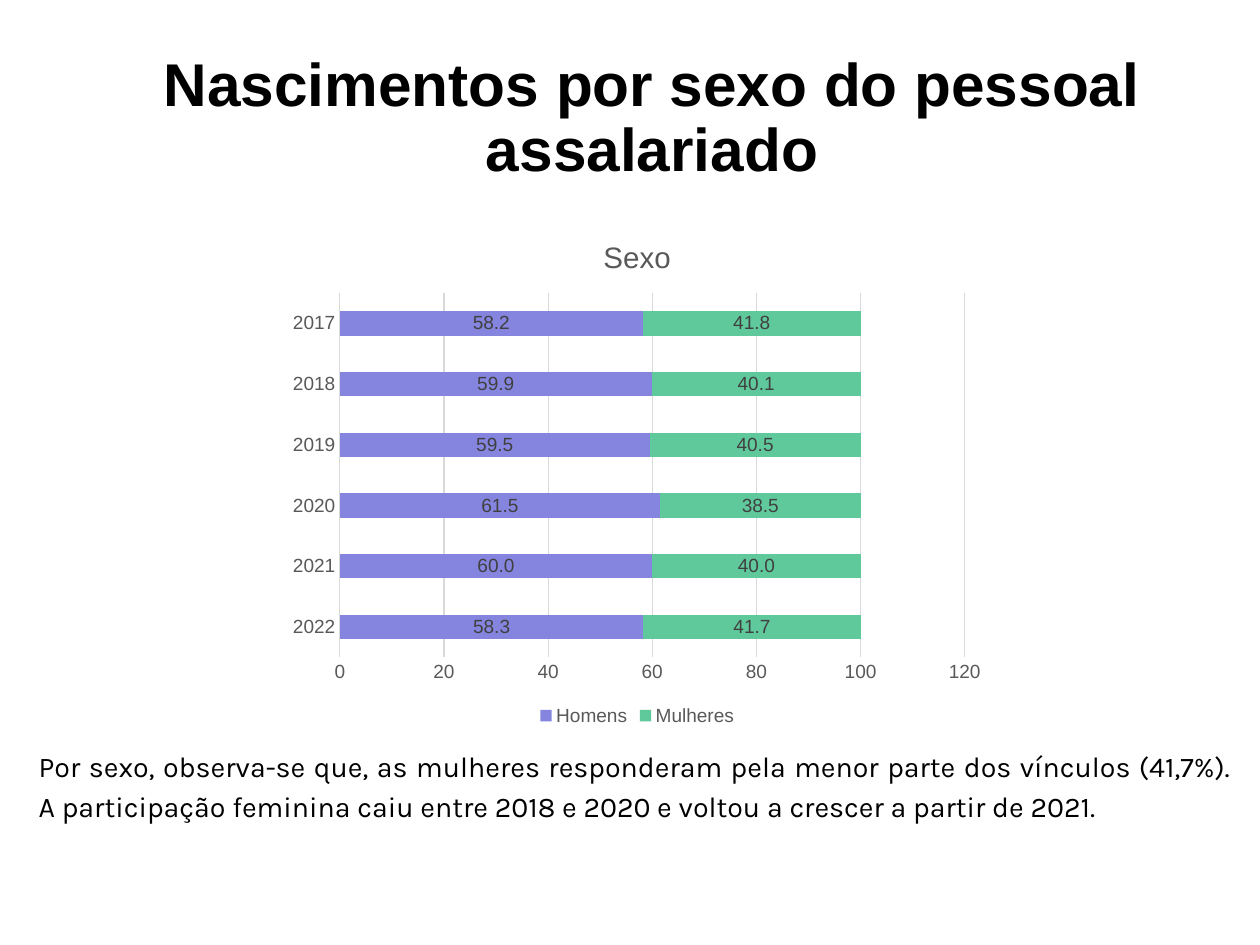
from pptx import Presentation
from pptx import util as u
from pptx.chart.data import CategoryChartData
from pptx.dml.color import RGBColor
from pptx.enum import chart as kinds, text
from pptx.oxml import parse_xml
from pptx.oxml.ns import nsdecls, qn

TITLE = "Nascimentos por sexo do pessoal assalariado"
COMMENT = (
    "Por sexo, observa-se que, as mulheres responderam pela menor parte dos "
    "vínculos (41,7%). A participação feminina caiu entre 2018 e 2020 e voltou "
    "a crescer a partir de 2021."
)
CHART_TITLE = "Sexo"
YEARS = ["2022", "2021", "2020", "2019", "2018", "2017"]
BLACK = RGBColor(0x00, 0x00, 0x00)
DARK = RGBColor(0x40, 0x40, 0x40)
GREY = RGBColor(0x59, 0x59, 0x59)
LIGHT = RGBColor(0xD9, 0xD9, 0xD9)
VIOLET = RGBColor(0x85, 0x85, 0xE0)
GREEN = RGBColor(0x60, 0xC9, 0x9C)
SHARES = [
    ("Homens", [58.3, 60, 61.5, 59.5, 59.9, 58.2], VIOLET),
    ("Mulheres", [41.7, 40, 38.5, 40.5, 40.1, 41.8], GREEN),
]
PLOT_PLACE = {"x": 0.085, "y": 0.15, "w": 0.872, "h": 0.708}


def set_font(font, size, color, name="Arial", bold=False):
    font.size, font.name, font.bold = u.Pt(size), name, bold
    font.color.rgb = color


def set_line(line, color):
    line.color.rgb = color
    line.width = u.Pt(0.75)


def add_text(page, place, words, align, spacing, anchor, **style):
    box = page.shapes.add_textbox(*map(u.Inches, place))
    frame = box.text_frame
    frame.word_wrap = True
    frame.vertical_anchor = anchor
    para = frame.paragraphs[0]
    para.text = words
    para.alignment = align
    para.line_spacing = spacing
    set_font(para.font, color=BLACK, **style)


def place_plot(chart):
    area = chart._chartSpace.chart.plotArea
    for layout in area.findall(qn("c:layout")):
        area.remove(layout)
    sizes = "".join(f'<c:{key} val="{part}"/>' for key, part in PLOT_PLACE.items())
    area.insert(0, parse_xml(
        f'<c:layout {nsdecls("c")}><c:manualLayout><c:layoutTarget val="inner"/>'
        f'<c:xMode val="edge"/><c:yMode val="edge"/>{sizes}'
        "</c:manualLayout></c:layout>"
    ))


def add_share_chart(page):
    data = CategoryChartData(number_format="0.0")
    data.categories = YEARS
    for name, values, _ in SHARES:
        data.add_series(name, values)
    place = map(u.Inches, (2.44, 1.89, 6.27, 4.5))
    chart = page.shapes.add_chart(kinds.XL_CHART_TYPE.BAR_STACKED, *place, data).chart
    set_font(chart.font, 10, BLACK)

    chart.has_title = True
    heading = chart.chart_title.text_frame.paragraphs[0]
    heading.text = CHART_TITLE
    set_font(heading.font, 18.6, GREY)
    chart.chart_title.include_in_layout = False

    chart.has_legend = True
    chart.legend.position = kinds.XL_LEGEND_POSITION.BOTTOM
    chart.legend.include_in_layout = False
    set_font(chart.legend.font, 12, GREY)

    years, scale = chart.category_axis, chart.value_axis
    for axis in (years, scale):
        axis.major_tick_mark = axis.minor_tick_mark = kinds.XL_TICK_MARK.NONE
        set_font(axis.tick_labels.font, 12, GREY)
    set_line(years.format.line, LIGHT)
    scale.format.line.fill.background()
    scale.has_major_gridlines = True
    set_line(scale.major_gridlines.format.line, LIGHT)
    scale.minimum_scale, scale.maximum_scale, scale.major_unit = 0, 120, 20
    scale.tick_labels.number_format = "0"
    scale.tick_labels.number_format_is_linked = False

    plot = chart.plots[0]
    plot.vary_by_categories = False
    plot.gap_width, plot.overlap = 150, 100
    for series, (_, _, color) in zip(plot.series, SHARES):
        series.format.fill.solid()
        series.format.fill.fore_color.rgb = color
        labels = series.data_labels
        labels.show_value = True
        labels.number_format = "0.0"
        labels.number_format_is_linked = False
        set_font(labels.font, 12, DARK)
    place_plot(chart)


def main():
    deck = Presentation()
    deck.slide_width = u.Cm(28)
    deck.slide_height = u.Cm(21)
    page = deck.slides.add_slide(deck.slide_layouts[6])
    add_text(page, (0.94, 0.39, 9.53, 1.31), TITLE, text.PP_ALIGN.CENTER, 0.9,
             text.MSO_ANCHOR.MIDDLE, size=38, bold=True)
    add_text(page, (0.24, 6.46, 10.63, 0.78), COMMENT, text.PP_ALIGN.JUSTIFY, 1.15,
             text.MSO_ANCHOR.TOP, size=18, name="Karla")
    add_share_chart(page)
    deck.save("out.pptx")


if __name__ == "__main__":
    main()
